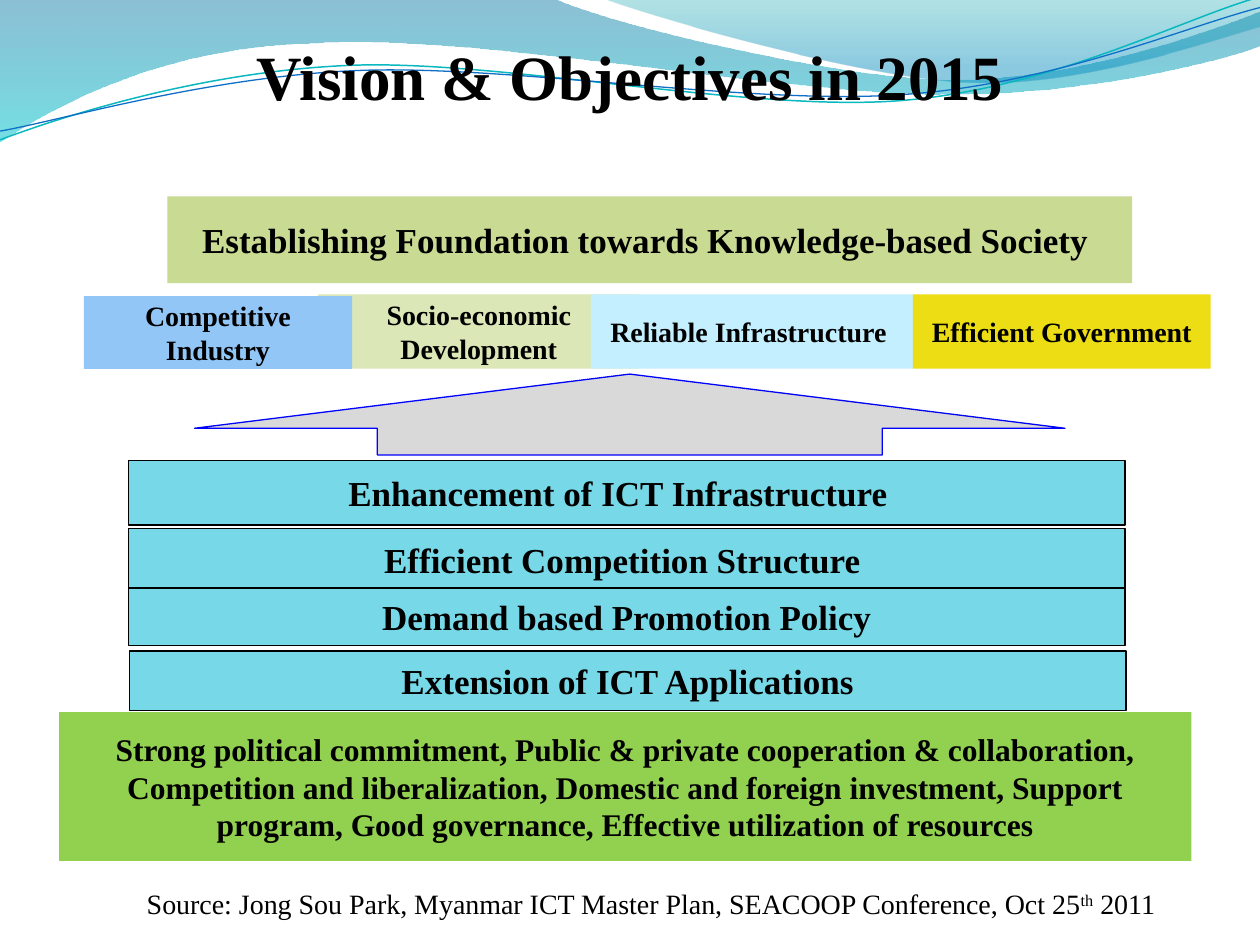
from pptx import Presentation
from pptx.dml.color import RGBColor
from pptx.enum.shapes import MSO_SHAPE
from pptx.enum.text import MSO_ANCHOR, PP_ALIGN
from pptx.oxml.ns import qn
from pptx.util import Pt
from lxml.etree import SubElement

FONT = "Times New Roman"
BLACK = RGBColor(0x00, 0x00, 0x00)
BLUE = RGBColor(0x00, 0x00, 0xFF)
GREY = RGBColor(0xD9, 0xD9, 0xD9)
AQUA = RGBColor(0x77, 0xD9, 0xE8)
OLIVE = RGBColor(0xC9, 0xDA, 0x92)
PALE_OLIVE = RGBColor(0xDB, 0xE7, 0xB6)
SKY = RGBColor(0x91, 0xC6, 0xF7)
ICE = RGBColor(0xC4, 0xEF, 0xFF)
YELLOW = RGBColor(0xEC, 0xDD, 0x14)
GREEN = RGBColor(0x92, 0xD0, 0x50)
WAVE_BLUE = RGBColor(0x00, 0x74, 0xA1)
WAVE_CYAN = RGBColor(0x00, 0xC6, 0xCF)
CREST_TEAL = RGBColor(0x00, 0xA1, 0xA9)
CREST_BLUE = RGBColor(0x00, 0x8B, 0xBF)
LINE_TEAL = RGBColor(0x0A, 0xB8, 0xBF)
LINE_BLUE = RGBColor(0x0F, 0x6F, 0xC6)

WAVES = [
    ([(0, 0), (316.8, -0.7),
      (342.7, 12.2, 478, 45.4, 545.8, 45.4),
      (614, 45.4, 689.8, 18.7, 720, 6.5), (720.7, 25.9),
      (707.8, 31.7, 626.4, 54.7, 537, 54),
      (447.8, 54, 275, 20.2, 185, 24.5),
      (92.9, 25.9, 33.1, 59.8, -0.7, 81.4)],
     [(0, WAVE_BLUE, 45), (1, WAVE_CYAN, 55)]),
    ([(344.9, -0.7), (366.5, 7.9, 491, 44.6, 553.7, 46.8),
      (616.3, 49.7, 691.9, 23, 720, 15.1), (720, 0)],
     [(0, CREST_TEAL, 30), (0.8, CREST_BLUE, 45)]),
]
WAVE_LINES = [
    ([(0, 79.9), (34.6, 67, 113.8, 41, 199.4, 37.4),
      (284.4, 33.8, 427, 64.1, 513.4, 57.6),
      (599.8, 51.1, 675.4, 10.8, 718.6, -1.4)], LINE_TEAL, 0.85),
    ([(0, 74.9), (33.8, 69.1, 118, 43.9, 203.8, 40.3),
      (290.2, 36.7, 429.8, 60.5, 516.2, 54),
      (601.9, 48.2, 677.5, 15.1, 720, 4.3)], LINE_BLUE, 0.75),
]
PILLARS = [
    ("Socio-economic Development", 133.9, 0, 183.6, 42.5, PALE_OLIVE),
    ("Competitive Industry", 0, 1, 153.3, 41.6, SKY),
    ("Reliable Infrastructure ", 289.8, 0, 184, 42.5, ICE),
    ("Efficient Government", 473.8, 0, 170.1, 42.5, YELLOW),
]
OBJECTIVES = [
    ("Enhancement of ICT Infrastructure ", 0, 0, 36.8, 12.2),
    ("Efficient Competition Structure ", 0, 39, 35.2, 7.2),
    ("Demand based Promotion Policy", 0, 72.8, 33, 7.2),
    ("Extension of ICT Applications", 0.5, 108.8, 34, 7.2),
]


def add_outline(slide, box, segments, close):
    placed = [[Pt(value + box[index % 2]) for index, value in enumerate(segment)]
              for segment in segments]
    anchors = [tuple(segment[-2:]) for segment in placed]
    builder = slide.shapes.build_freeform(*anchors[0])
    builder.add_line_segments(anchors[1:], close=close)
    shape = builder.convert_to_shape()
    shape.shadow.inherit = False
    lines = list(shape.element.iter(qn("a:lnTo")))
    for line, segment in zip(lines, placed[1:]):
        if len(segment) == 2:
            continue
        line.tag = qn("a:cubicBezTo")
        end = line[0]
        for x, y in (segment[0:2], segment[2:4]):
            control = end.makeelement(qn("a:pt"), {
                "x": str(x - shape.left), "y": str(y - shape.top)})
            end.addprevious(control)
    return shape


def add_waves(slide, box):
    for segments, stops in WAVES:
        shape = add_outline(slide, box, segments, True)
        shape.line.fill.background()
        shape.fill.gradient()
        shape.fill.gradient_angle = 270
        for stop, (position, color, opacity) in zip(shape.fill.gradient_stops, stops):
            stop.position = position
            stop.color.rgb = color
        for element, (_, _, opacity) in zip(shape.element.iter(qn("a:srgbClr")), stops):
            SubElement(element, qn("a:alpha")).set("val", str(opacity * 1000))
    for segments, color, width in WAVE_LINES:
        shape = add_outline(slide, box, segments, False)
        shape.fill.background()
        shape.line.color.rgb = color
        shape.line.width = Pt(width)


def write(shape, text, size, bold=True, wrap=True):
    frame = shape.text_frame
    frame.word_wrap = wrap
    frame.vertical_anchor = MSO_ANCHOR.MIDDLE
    paragraph = frame.paragraphs[0]
    paragraph.alignment = PP_ALIGN.CENTER
    paragraph.font.name = FONT
    paragraph.font.size = Pt(size)
    paragraph.font.bold = bold
    paragraph.font.color.rgb = BLACK
    paragraph.add_run().text = text
    return paragraph


def add_block(slide, box, fill, line=None, kind=MSO_SHAPE.RECTANGLE):
    shape = slide.shapes.add_shape(kind, *map(Pt, box))
    shape.shadow.inherit = False
    shape.fill.solid()
    shape.fill.fore_color.rgb = fill
    if line is None:
        shape.line.fill.background()
    else:
        shape.line.color.rgb = line
        shape.line.width = Pt(0.75)
    return shape


def add_title(slide, box):
    write(slide.shapes.add_textbox(*map(Pt, box)), "Vision & Objectives in 2015", 36)


def add_vision(slide, box):
    write(add_block(slide, box, OLIVE),
          "Establishing Foundation towards Knowledge-based Society ", 20)


def add_pillars(slide, box):
    for text, x, y, width, height, fill in PILLARS:
        write(add_block(slide, (box[0] + x, box[1] + y, width, height), fill), text, 16)


def add_up_arrow(slide, box):
    arrow = add_block(slide, box, GREY, BLUE, MSO_SHAPE.UP_ARROW)
    arrow.adjustments[0] = 0.58
    arrow.adjustments[1] = 0.67


def add_objectives(slide, box):
    for text, x, y, height, right_inset in OBJECTIVES:
        bar = add_block(slide, (box[0] + x, box[1] + y, box[2], height), AQUA, BLACK)
        write(bar, text, 20, wrap=False)
        bar.text_frame.margin_right = Pt(right_inset)


def add_commitment(slide, box):
    write(add_block(slide, box, GREEN),
          "Strong political commitment, Public & private cooperation & collaboration, "
          "Competition and liberalization, Domestic and foreign investment, Support "
          "program, Good governance, Effective utilization of resources", 18)


def add_source(slide, box):
    paragraph = write(slide.shapes.add_textbox(*map(Pt, box)),
                      "Source: Jong Sou Park, Myanmar ICT Master Plan, SEACOOP Conference, Oct 25",
                      16, bold=False)
    ordinal = paragraph.add_run()
    ordinal.text = "th"
    ordinal.font._element.set("baseline", "30000")
    paragraph.add_run().text = " 2011"


def main():
    presentation = Presentation()
    presentation.slide_width = Pt(720)
    presentation.slide_height = Pt(540)
    slide = presentation.slides.add_slide(presentation.slide_layouts[6])
    add_waves(slide, (0, 0, 720, 82))
    add_title(slide, (36, 18, 648, 50))
    add_vision(slide, (95.6, 112.2, 551.4, 49.6))
    add_pillars(slide, (47.9, 168.2, 643.9, 42.6))
    add_up_arrow(slide, (111.2, 213.8, 497.4, 46.2))
    add_objectives(slide, (73.4, 263.2, 569.6, 142.8))
    add_commitment(slide, (33.8, 406.9, 647, 85))
    add_source(slide, (48, 498.4, 648, 36))
    presentation.save("out.pptx")


if __name__ == "__main__":
    main()
